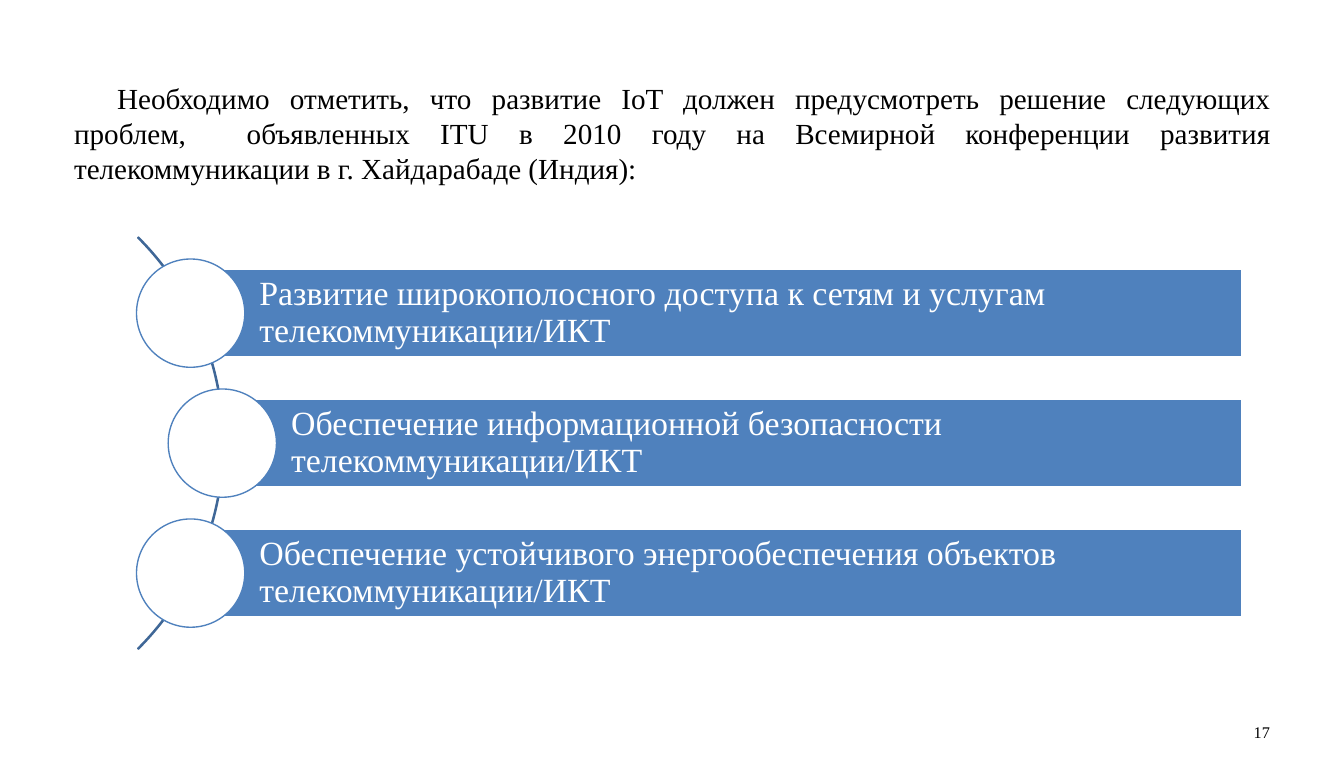
import pptx
import pptx.dml.color
import pptx.enum.shapes
import pptx.enum.text
import pptx.util

Cm = pptx.util.Cm
Pt = pptx.util.Pt
SHAPE = pptx.enum.shapes.MSO_SHAPE
ALIGN = pptx.enum.text.PP_ALIGN
ANCHOR = pptx.enum.text.MSO_ANCHOR

FONT = "Times New Roman"
COLORS = {"text": "000000", "white": "FFFFFF", "blue": "4F81BD", "arc": "3F6797"}

INTRO = (
    "Необходимо отметить, что развитие IoT должен предусмотреть решение следующих "
    "проблем,  объявленных ITU в 2010 году на Всемирной конференции развития "
    "телекоммуникации в г. Хайдарабаде (Индия):"
)
# Text of each problem and the left edge of its bar in cm
PROBLEMS = [
    ("Развитие широкополосного доступа к сетям и услугам телекоммуникации/ИКТ", 9.93),
    ("Обеспечение информационной безопасности телекоммуникации/ИКТ", 11.58),
    ("Обеспечение устойчивого энергообеспечения объектов телекоммуникации/ИКТ", 9.93),
]
FIRST_CENTER = 16.31
PITCH = 6.77
BAR_RIGHT = 64.69
BAR_HEIGHT = 4.52
CIRCLE_SIZE = 5.64
ARC_LEFT = -18.69
ARC_SIZE = 30.35


def rgb(name):
    return pptx.dml.color.RGBColor.from_string(COLORS[name])


def write_text(shape, text, size, color="text", align=ALIGN.LEFT, anchor=ANCHOR.TOP,
               insets=(0.36, 0.18, 0.36, 0.18), indent=0, before=0, line_spacing=None):
    """Fill a shape with one paragraph; insets and indent are in cm."""
    frame = shape.text_frame
    frame.word_wrap = True
    frame.vertical_anchor = anchor
    (frame.margin_left, frame.margin_top,
     frame.margin_right, frame.margin_bottom) = map(Cm, insets)
    paragraph = frame.paragraphs[0]
    paragraph.alignment = align
    paragraph.space_before = Pt(before)
    paragraph.line_spacing = line_spacing
    if indent:
        paragraph._p.get_or_add_pPr().set("indent", str(Cm(indent)))
    run = paragraph.add_run()
    run.text = text
    run.font.name = FONT
    run.font.size = Pt(size)
    run.font.color.rgb = rgb(color)


def add_text(slide, text, left, top, width, height, **text_format):
    box = slide.shapes.add_textbox(Cm(left), Cm(top), Cm(width), Cm(height))
    write_text(box, text, **text_format)


def add_shape(slide, kind, left, top, width, height, line, fill=None):
    shape = slide.shapes.add_shape(kind, Cm(left), Cm(top), Cm(width), Cm(height))
    shape.shadow.inherit = False
    shape.line.color.rgb = rgb(line)
    shape.line.width = Pt(2)
    if fill:
        shape.fill.solid()
        shape.fill.fore_color.rgb = rgb(fill)
    else:
        shape.fill.background()
    return shape


def add_arc(slide):
    """Draw the thin curve that runs behind the circles."""
    top = FIRST_CENTER + PITCH - ARC_SIZE / 2
    arc = add_shape(slide, SHAPE.BLOCK_ARC, ARC_LEFT, top, ARC_SIZE, ARC_SIZE, "arc")
    for index, value in enumerate((189, 27, 0.002)):
        arc.adjustments[index] = value


def add_problem(slide, text, left, center):
    """Draw a bar with its text and the circle centred on its left edge."""
    bar = add_shape(slide, SHAPE.RECTANGLE, left, center - BAR_HEIGHT / 2,
                    BAR_RIGHT - left, BAR_HEIGHT, "white", "blue")
    write_text(bar, text, size=50, color="white", anchor=ANCHOR.MIDDLE,
               insets=(3.58, 0.36, 0.36, 0.36), line_spacing=0.9)
    add_shape(slide, SHAPE.OVAL, left - CIRCLE_SIZE / 2, center - CIRCLE_SIZE / 2,
              CIRCLE_SIZE, CIRCLE_SIZE, "blue", "white")


def main():
    presentation = pptx.Presentation()
    presentation.slide_width = Cm(70)
    presentation.slide_height = Cm(40)
    slide = presentation.slides.add_slide(presentation.slide_layouts[6])

    add_text(slide, INTRO, 3.5, 4.01, 63.02, 10.39, size=43,
             align=ALIGN.JUSTIFY, indent=2.24, before=8.6)
    add_text(slide, "17", 50.17, 37.08, 16.33, 2.13, size=24,
             align=ALIGN.RIGHT, anchor=ANCHOR.MIDDLE)
    add_arc(slide)
    for row, (text, left) in enumerate(PROBLEMS):
        add_problem(slide, text, left, FIRST_CENTER + row * PITCH)

    presentation.save("out.pptx")


if __name__ == "__main__":
    main()
